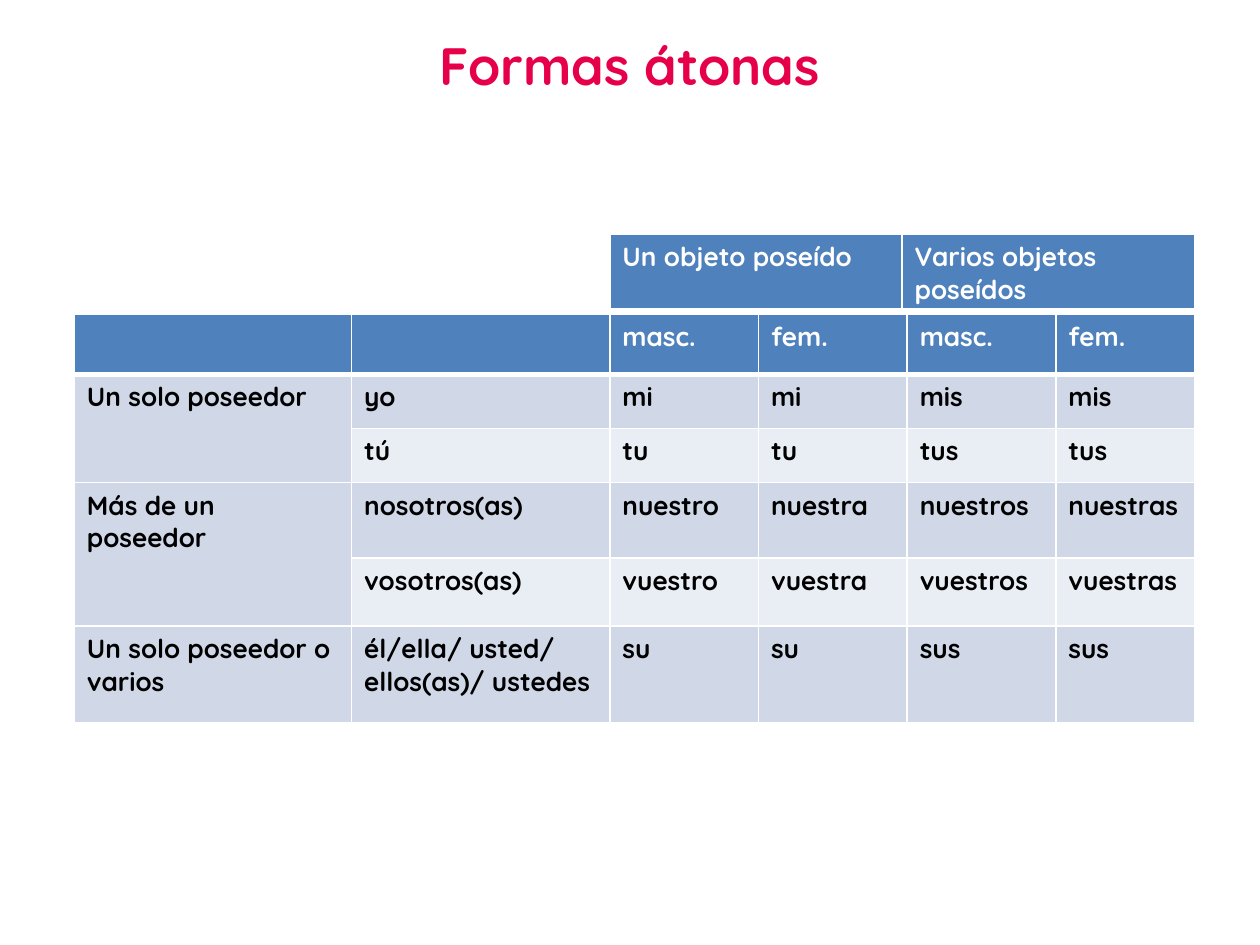
from lxml import etree
from pptx import Presentation
from pptx import util as u
from pptx.dml.color import RGBColor
from pptx.enum import text
from pptx.oxml.ns import qn

TITLE = "Formas átonas"
OBJECTS = [["Un objeto poseído", "Varios objetos poseídos"]]
FORMS = [
    ["", "", "masc.", "fem.", "masc.", "fem."],
    ["Un solo poseedor", "yo", "mi", "mi", "mis", "mis"],
    ["", "tú", "tu", "tu", "tus", "tus"],
    ["Más de un poseedor", "nosotros(as)", "nuestro", "nuestra", "nuestros", "nuestras"],
    ["", "vosotros(as)", "vuestro", "vuestra", "vuestros", "vuestras"],
    ["Un solo poseedor o varios", "él/ella/ usted/ ellos(as)/ ustedes", "su", "su", "sus", "sus"],
]
OWNERS = [(1, 2), (3, 4)]  # first and last row of each merged owner cell
COLS = [2.2, 2.05, 1.18, 1.18, 1.18, 1.1]
ROWS = [0.48, 0.43, 0.43, 0.6, 0.54, 0.77]
LEFT, TOP, HEAD = 0.59, 2.49, 0.6
HEX = {"head": "4F81BD", "odd": "D0D8E8", "even": "E9EDF4",
       "white": "FFFFFF", "black": "000000", "title": "E60049"}


def style(font, size, tone):
    look = {"name": "Quicksand", "size": u.Pt(size), "bold": True}
    for key, value in look.items():
        setattr(font, key, value)
    font.color.rgb = RGBColor.from_string(HEX[tone])


def edge(cell, widths):
    """Draw white cell borders; widths maps a side (L, R, T, B) to points."""
    props = cell._tc.get_or_add_tcPr()
    for side, width in widths.items():
        line = etree.SubElement(props, qn("a:ln" + side), w=str(u.Pt(width)))
        fill = etree.SubElement(line, qn("a:solidFill"))
        etree.SubElement(fill, qn("a:srgbClr"), val=HEX["white"])


def grid(slide, data, left, top, cols, rows):
    frame = slide.shapes.add_table(
        len(rows), len(cols), *map(u.Inches, (left, top, sum(cols), sum(rows))))
    table = frame.table
    table.horz_banding = False
    for col, width in zip(table.columns, cols):
        col.width = u.Inches(width)
    for r, (row, height) in enumerate(zip(table.rows, rows)):
        row.height = u.Inches(height)
        for c, cell in enumerate(row.cells):
            band = "head" if r == 0 else "odd" if r % 2 or c == 0 else "even"
            edge(cell, {"L": 1, "R": 1, "T": 3 if r == 1 else 1, "B": 1 if r else 3})
            cell.fill.solid()
            cell.fill.fore_color.rgb = RGBColor.from_string(HEX[band])
            if data[r][c]:
                cell.text = data[r][c]
                run = cell.text_frame.paragraphs[0].runs[0]
                style(run.font, 15, "black" if r else "white")
    return table


def main():
    deck = Presentation()
    deck.slide_width, deck.slide_height = u.Inches(10), u.Inches(7.5)
    slide = deck.slides.add_slide(deck.slide_layouts[5])

    title = slide.shapes.title
    place = {"left": 0, "top": 0.21, "width": 10, "height": 0.61}
    for key, value in place.items():
        setattr(title, key, u.Inches(value))
    title.text = TITLE
    body = title.text_frame
    body.auto_size = text.MSO_AUTO_SIZE.SHAPE_TO_FIT_TEXT
    body.vertical_anchor = text.MSO_ANCHOR.TOP
    body.paragraphs[0].alignment = text.PP_ALIGN.CENTER
    style(body.paragraphs[0].runs[0].font, 30, "title")

    shift = sum(COLS[:2])
    half = sum(COLS[2:]) / 2
    grid(slide, OBJECTS, LEFT + shift, TOP - HEAD - 0.03, [half] * 2, [HEAD])
    forms = grid(slide, FORMS, LEFT, TOP, COLS, ROWS)
    for first, last in OWNERS:
        forms.cell(first, 0).merge(forms.cell(last, 0))

    deck.save("out.pptx")


if __name__ == "__main__":
    main()
